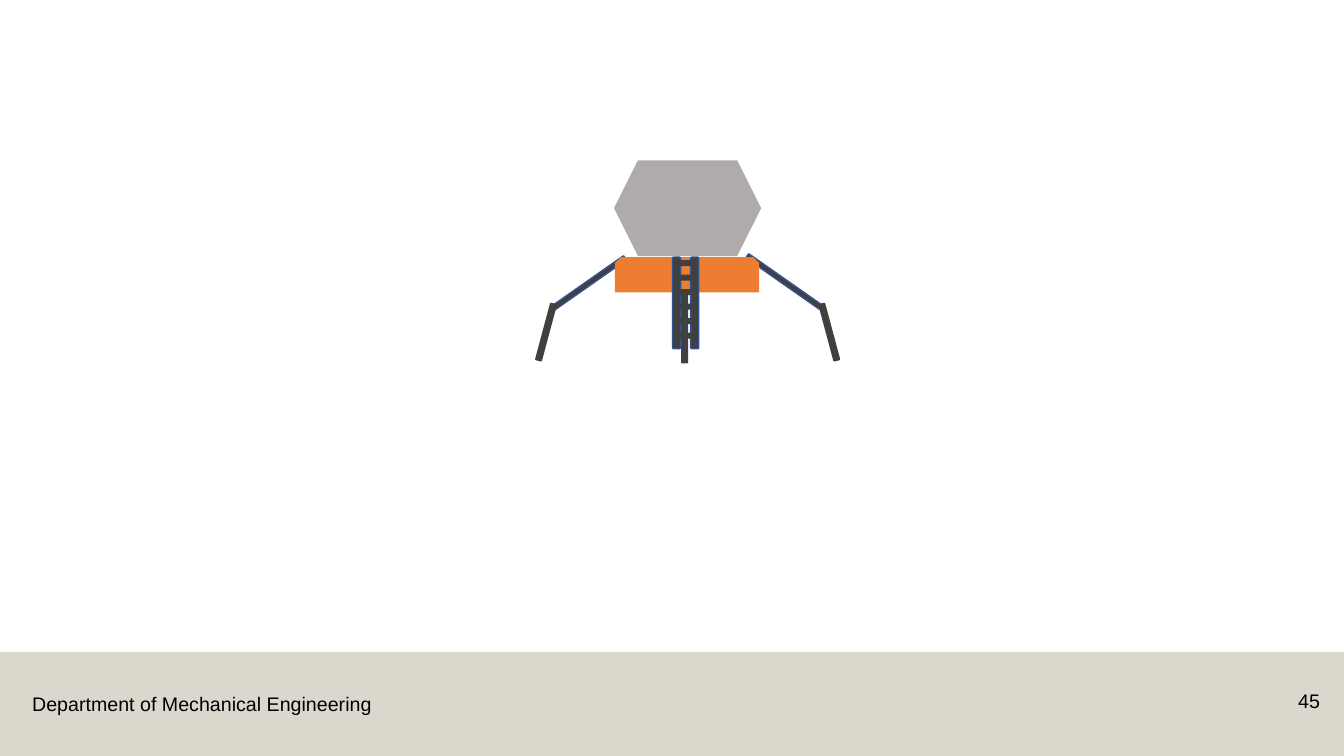
from dataclasses import dataclass

import pptx
import pptx.dml.color
import pptx.enum.shapes
import pptx.enum.text
import pptx.oxml
import pptx.oxml.ns
import pptx.util

Inches = pptx.util.Inches
Pt = pptx.util.Pt
Kind = pptx.enum.shapes.MSO_SHAPE
Align = pptx.enum.text.PP_ALIGN

DARK = "404040"
EDGE = "325491"
BAR = Kind.ROUNDED_RECTANGLE


@dataclass
class Part:
    left: float
    top: float
    width: float
    height: float
    kind: int = BAR
    fill: str = DARK
    line: str = ""
    turn: float = 0


@dataclass
class Label:
    text: str
    left: float
    top: float
    width: float
    height: float
    align: int = Align.LEFT
    wrap: bool = True


def color(code: str) -> pptx.dml.color.RGBColor:
    return pptx.dml.color.RGBColor.from_string(code)


def draw(slide, part: Part):
    shape = slide.shapes.add_shape(
        part.kind, Inches(part.left), Inches(part.top),
        Inches(part.width), Inches(part.height))
    shape.shadow.inherit = False
    shape.rotation = part.turn
    shape.fill.solid()
    shape.fill.fore_color.rgb = color(part.fill)
    if part.line:
        shape.line.color.rgb = color(part.line)
        shape.line.width = Pt(1)
    else:
        shape.line.fill.background()
    return shape


def fade(shape, share: int) -> None:
    """Make a solid fill partly opaque, in percent."""
    tone = shape.fill._xPr.find(".//" + pptx.oxml.ns.qn("a:srgbClr"))
    space = pptx.oxml.ns.nsdecls("a")
    tone.append(pptx.oxml.parse_xml(f'<a:alpha {space} val="{share * 1000}"/>'))


def write(slide, label: Label) -> None:
    box = slide.shapes.add_textbox(
        Inches(label.left), Inches(label.top),
        Inches(label.width), Inches(label.height))
    box.text_frame.word_wrap = label.wrap
    para = box.text_frame.paragraphs[0]
    para.text = label.text
    para.alignment = label.align
    para.font.name = "Arial"
    para.font.size = Pt(14)
    para.font.color.rgb = color("000000")


# Rungs sit evenly down the ladder; the third is slightly offset
RUNGS = [Part(6.73 if row == 2 else 6.71, 2.58 + row * 0.144, 0.18, 0.06)
         for row in range(6)]

LANDER = [
    # Middle leg and upper struts, behind the body
    Part(6.44, 3.22, 0.7, 0.07, turn=90),
    Part(7.33, 2.77, 0.9, 0.05, line=EDGE, turn=35),
    Part(5.38, 2.79, 0.9, 0.05, line=EDGE, turn=145),
    # Cabin and base
    Part(6.09, 1.59, 1.46, 0.95, Kind.HEXAGON, "AFABAB"),
    Part(6.1, 2.55, 1.43, 0.35, Kind.SNIP_2_SAME_RECTANGLE, "ED7D31"),
    # Ladder
    *[Part(left, 2.55, 0.08, 0.91, line=EDGE) for left in (6.67, 6.85)],
    *RUNGS,
    # Lower legs
    Part(5.12, 3.26, 0.59, 0.07, turn=105),
    Part(7.93, 3.26, 0.59, 0.07, turn=75),
]

LABELS = [
    Label("Department of Mechanical Engineering", 0.22, 6.82, 3.59, 0.34,
          wrap=False),
    Label("45", 12.42, 6.79, 0.77, 0.4, Align.RIGHT),
]


def main() -> None:
    deck = pptx.Presentation()
    deck.slide_width = Inches(13.33)
    deck.slide_height = Inches(7.5)
    slide = deck.slides.add_slide(deck.slide_layouts[6])

    # Footer
    band = draw(slide, Part(0, 6.47, 13.33, 1.03, Kind.RECTANGLE, "B7B09C"))
    fade(band, 50)
    for label in LABELS:
        write(slide, label)

    # Lander
    for part in LANDER:
        draw(slide, part)

    deck.save("out.pptx")


if __name__ == "__main__":
    main()
